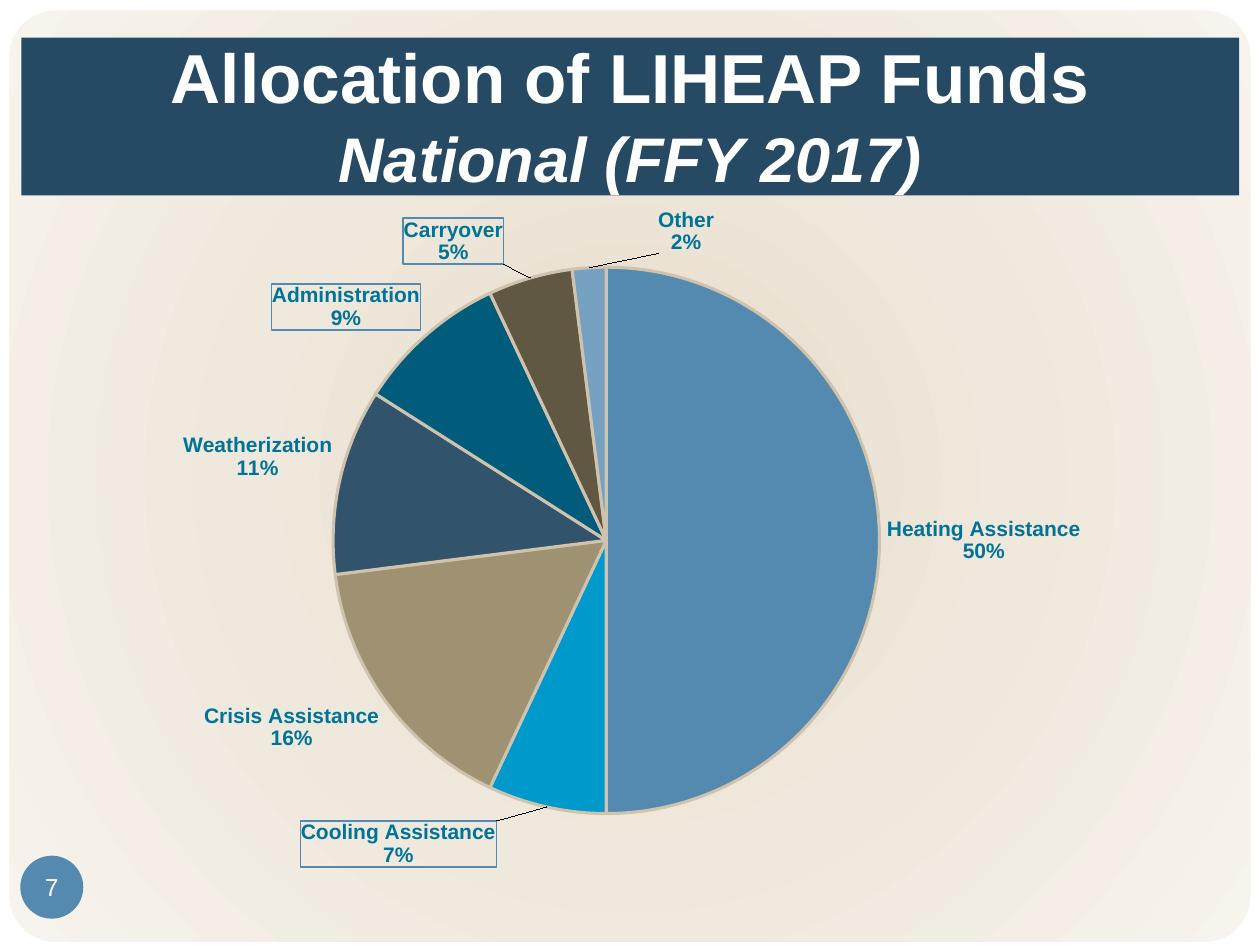
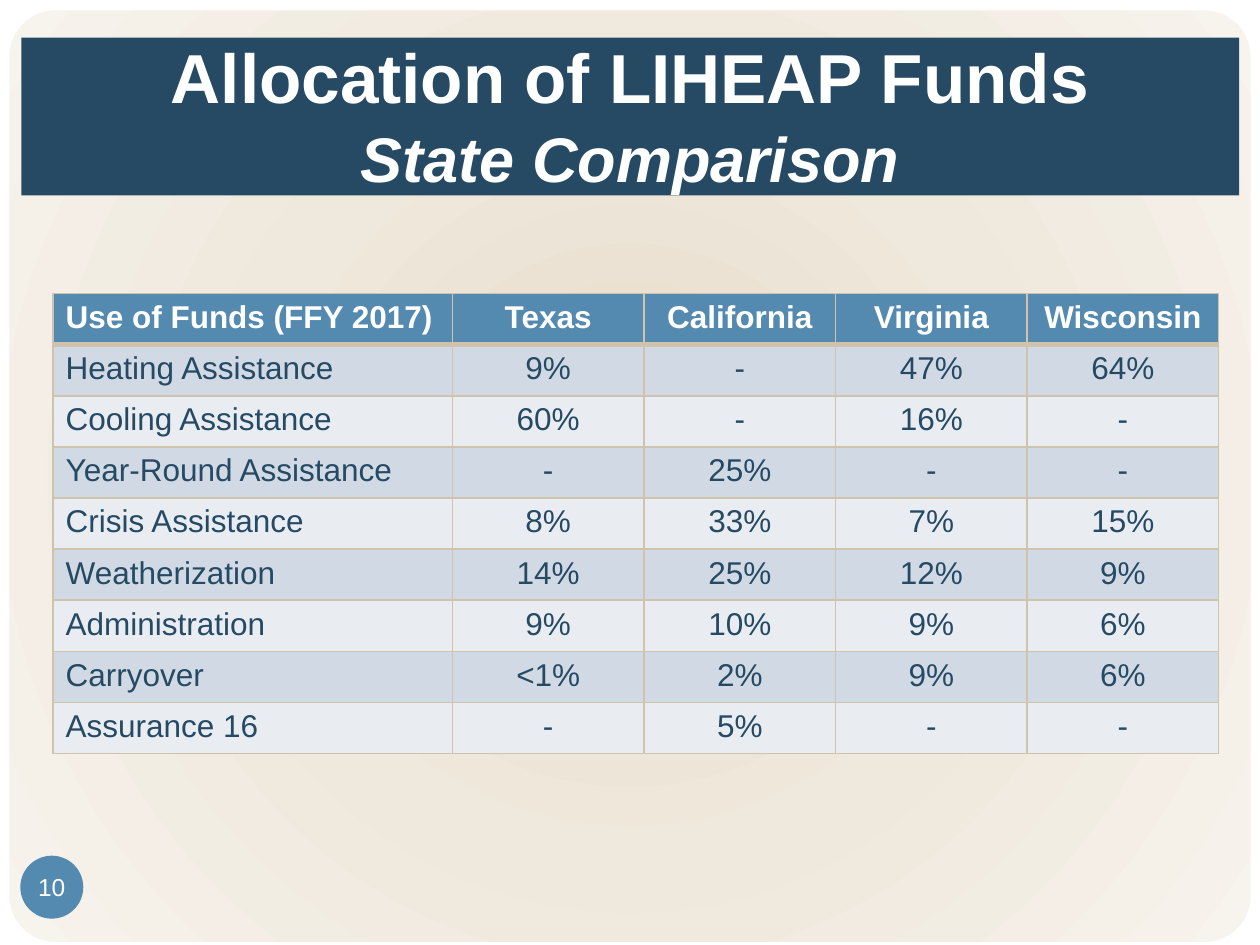
from copy import deepcopy

from pptx import Presentation
from pptx.chart.data import CategoryChartData
from pptx.dml.color import RGBColor
from pptx.enum.chart import XL_CHART_TYPE as ChartType, XL_LABEL_POSITION as LabelPosition
from pptx.enum.shapes import MSO_SHAPE as ShapeKind
from pptx.enum.text import MSO_ANCHOR as Anchor, MSO_AUTO_SIZE as AutoSize, PP_ALIGN as Align
from pptx.oxml import parse_xml
from pptx.oxml.ns import nsdecls, qn
from pptx.util import Cm, Pt

FONT = "Arial"
WHITE, NAVY, BLUE, TEAL, SAND = "FFFFFF", "264A64", "548AB0", "007399", "CFC3AE"
ROW_FILLS = ["D1DAE4", "E9EDF2"]
PAGE_STOPS = [(0, "E6DBC9"), (50, "EFE8DC"), (100, "F7F3ED")]

PAGE_BOX = (0, 0, 25.4, 19.05)
FRAME_BOX = (0.18, 0.2, 25.04, 18.8)
TITLE_BOX = (0.43, 0.76, 24.55, 3.18)
BADGE_BOX = (0.41, 17.25, 1.27, 1.27)
CHART_BOX = (0.41, 4.01, 24.56, 13.77)
TABLE_BOX = (1.07, 5.92, 23.5, 9.27)

TITLE = "Allocation of LIHEAP Funds"
FUND_SHARES = [
    ("Heating Assistance", 50, BLUE),
    ("Cooling Assistance", 7, "0099CC"),
    ("Crisis Assistance", 16, "9E9273"),
    ("Weatherization", 11, "31536B"),
    ("Administration", 9, "005C7A"),
    ("Carryover", 5, "615843"),
    ("Other", 2, "76A1C0"),
]
LABEL_SHIFTS = {1: (-0.04, 0.01), 4: (0, 0), 5: (-0.02, -0.01), 6: (0.08, -0.01)}
BOXED_LABELS = {1, 4, 5}
STATE_ROWS = [
    ["Use of Funds (FFY 2017)", "Texas", "California", "Virginia", "Wisconsin"],
    ["Heating Assistance", "9%", "-", "47%", "64%"],
    ["Cooling Assistance", "60%", "-", "16%", "-"],
    ["Year-Round Assistance", "-", "25%", "-", "-"],
    ["Crisis Assistance", "8%", "33%", "7%", "15%"],
    ["Weatherization", "14%", "25%", "12%", "9%"],
    ["Administration", "9%", "10%", "9%", "6%"],
    ["Carryover", "<1%", "2%", "9%", "6%"],
    ["Assurance 16", "-", "5%", "-", "-"],
]


def color(value):
    return RGBColor.from_string(value)


def lengths(box):
    return [Cm(value) for value in box]


def paint(shape, fill):
    shape.fill.solid()
    shape.fill.fore_color.rgb = color(fill)


def style_font(font, size, fill, bold=False, italic=False):
    font.name = FONT
    font.size = Pt(size)
    font.bold = bold
    font.italic = italic
    font.color.rgb = color(fill)


def add_run(paragraph, text, size, fill, bold=False, italic=False):
    run = paragraph.add_run()
    run.text = text
    style_font(run.font, size, fill, bold, italic)


def add_plain_shape(slide, kind, box, fill):
    shape = slide.shapes.add_shape(kind, *lengths(box))
    shape.shadow.inherit = False
    paint(shape, fill)
    shape.line.fill.background()
    return shape


def set_page_gradient(shape):
    stops = "".join(
        f'<a:gs pos="{position * 1000}"><a:srgbClr val="{value}"/></a:gs>'
        for position, value in PAGE_STOPS
    )
    gradient = parse_xml(
        f'<a:gradFill {nsdecls("a")} rotWithShape="1"><a:gsLst>{stops}</a:gsLst>'
        '<a:path path="circle"><a:fillToRect l="50000" t="50000" r="50000" b="50000"/></a:path>'
        "</a:gradFill>"
    )
    properties = shape.element.spPr
    properties.replace(properties.find(qn("a:solidFill")), gradient)


def add_master_page(presentation, slide):
    page = add_plain_shape(slide, ShapeKind.RECTANGLE, PAGE_BOX, WHITE)
    frame = add_plain_shape(slide, ShapeKind.ROUNDED_RECTANGLE, FRAME_BOX, WHITE)
    frame.adjustments[0] = 0.05
    set_page_gradient(frame)
    frame.line.color.rgb = color(WHITE)
    frame.line.width = Pt(0.5)
    master_tree = presentation.slide_master.shapes.element
    for position, shape in enumerate([page, frame], 2):
        master_tree.insert(position, shape.element)


def place_title(slide, box, subtitle):
    title = slide.shapes.title
    title.left, title.top, title.width, title.height = lengths(box)
    paint(title, NAVY)
    frame = title.text_frame
    frame.auto_size = AutoSize.NONE
    frame.word_wrap = True
    frame.vertical_anchor = Anchor.BOTTOM
    frame.margin_top = frame.margin_bottom = 0
    paragraph = frame.paragraphs[0]
    paragraph.alignment = Align.CENTER
    paragraph.line_spacing = Pt(44.6)
    add_run(paragraph, TITLE, 39.6, WHITE, bold=True)
    paragraph.add_line_break()
    add_run(paragraph, subtitle, 36, WHITE, bold=True, italic=True)


def add_page_badge(slide, box, number):
    badge = add_plain_shape(slide, ShapeKind.OVAL, box, BLUE)
    frame = badge.text_frame
    frame.margin_left = frame.margin_right = frame.margin_top = frame.margin_bottom = 0
    frame.word_wrap = False
    frame.vertical_anchor = Anchor.MIDDLE
    paragraph = frame.paragraphs[0]
    paragraph.alignment = Align.CENTER
    add_run(paragraph, str(number), 14, WHITE)


def manual_layout(x, y, extra=""):
    return (
        f'<c:layout {nsdecls("c")}><c:manualLayout>{extra}'
        f'<c:x val="{x}"/><c:y val="{y}"/>'
    )


def label_separator():
    return parse_xml(f'<c:separator {nsdecls("c")}>\n</c:separator>')


def shifted_label(index, text_properties):
    x, y = LABEL_SHIFTS[index]
    outline = ""
    if index in BOXED_LABELS:
        outline = (
            '<c:spPr><a:noFill/><a:ln w="9525"><a:solidFill>'
            f'<a:srgbClr val="{BLUE}"/></a:solidFill></a:ln></c:spPr>'
        )
    flags = {"LegendKey": 0, "Val": 0, "CatName": 1, "SerName": 0, "Percent": 1, "BubbleSize": 0}
    shows = "".join(f'<c:show{name} val="{value}"/>' for name, value in flags.items())
    label = parse_xml(
        f'<c:dLbl {nsdecls("c", "a")}><c:idx val="{index}"/>'
        f"{manual_layout(x, y)}</c:manualLayout></c:layout>"
        f'<c:numFmt formatCode="0%" sourceLinked="0"/>{outline}'
        f'<c:dLblPos val="outEnd"/>{shows}</c:dLbl>'
    )
    label.find(qn("c:dLblPos")).addprevious(deepcopy(text_properties))
    label.append(label_separator())
    return label


def label_slices(series):
    labels = series.data_labels
    labels.show_value = False
    labels.show_percentage = True
    labels.show_category_name = True
    labels.number_format = "0%"
    labels.number_format_is_linked = False
    labels.position = LabelPosition.OUTSIDE_END
    style_font(labels.font, 12, TEAL, bold=True)
    group = series.data_labels._element
    last_flag = group.find(qn("c:showBubbleSize"))
    if last_flag is None:
        last_flag = group.find(qn("c:showPercent"))
    last_flag.addnext(label_separator())
    text_properties = group.find(qn("c:txPr"))
    for position, index in enumerate(LABEL_SHIFTS):
        group.insert(position, shifted_label(index, text_properties))


def add_fund_pie(slide, box):
    data = CategoryChartData()
    data.categories = [name for name, _, _ in FUND_SHARES]
    data.add_series("Series 1", [share for _, share, _ in FUND_SHARES])
    chart = slide.shapes.add_chart(ChartType.PIE, *lengths(box), data).chart
    chart.has_legend = False
    chart.has_title = False
    style_font(chart.font, 10, WHITE)
    plot = chart.plots[0]
    plot.vary_by_categories = True
    series = plot.series[0]
    for index, (_, _, fill) in enumerate(FUND_SHARES):
        slice_format = series.points[index].format
        paint(slice_format, fill)
        slice_format.line.color.rgb = color(SAND)
        slice_format.line.width = Pt(1.75)
    label_slices(series)
    plot_area = chart.element.chart.plotArea
    for layout in plot_area.findall(qn("c:layout")):
        plot_area.remove(layout)
    modes = '<c:layoutTarget val="inner"/><c:xMode val="edge"/><c:yMode val="edge"/>'
    plot_area.insert(0, parse_xml(
        manual_layout(0.256, 0.1, modes)
        + '<c:w val="0.45"/><c:h val="0.8"/></c:manualLayout></c:layout>'
    ))


def set_borders(cell, bottom_width, top_width):
    properties = cell._tc.get_or_add_tcPr()
    widths = {"L": 1, "R": 1, "T": top_width, "B": bottom_width}
    for position, (side, width) in enumerate(widths.items()):
        properties.insert(position, parse_xml(
            f'<a:ln{side} {nsdecls("a")} w="{Pt(width)}"><a:solidFill>'
            f'<a:srgbClr val="{SAND}"/></a:solidFill></a:ln{side}>'
        ))


def add_state_table(slide, box):
    row_count, column_count = len(STATE_ROWS), len(STATE_ROWS[0])
    table = slide.shapes.add_table(row_count, column_count, *lengths(box)).table
    _, _, width, height = box
    name_width = 8.05
    state_width = (width - name_width) / (column_count - 1)
    for index, column in enumerate(table.columns):
        column.width = Cm(state_width if index else name_width)
    for row_index, values in enumerate(STATE_ROWS):
        table.rows[row_index].height = Cm(height / row_count)
        header = row_index == 0
        for column_index, value in enumerate(values):
            cell = table.cell(row_index, column_index)
            paint(cell, BLUE if header else ROW_FILLS[(row_index - 1) % 2])
            set_borders(cell, 3 if header else 1, 3 if row_index == 1 else 1)
            paragraph = cell.text_frame.paragraphs[0]
            paragraph.alignment = Align.CENTER if column_index else Align.LEFT
            add_run(paragraph, value, 18, WHITE if header else NAVY, bold=header)


def add_fund_slide(presentation, subtitle, number):
    slide = presentation.slides.add_slide(presentation.slide_layouts[5])
    place_title(slide, TITLE_BOX, subtitle)
    add_page_badge(slide, BADGE_BOX, number)
    return slide


def main():
    presentation = Presentation()
    presentation.slide_width, presentation.slide_height = lengths(PAGE_BOX[2:])
    national = add_fund_slide(presentation, "National (FFY 2017)", 7)
    add_master_page(presentation, national)
    add_fund_pie(national, CHART_BOX)
    states = add_fund_slide(presentation, "State Comparison", 10)
    add_state_table(states, TABLE_BOX)
    presentation.save("out.pptx")


if __name__ == "__main__":
    main()
